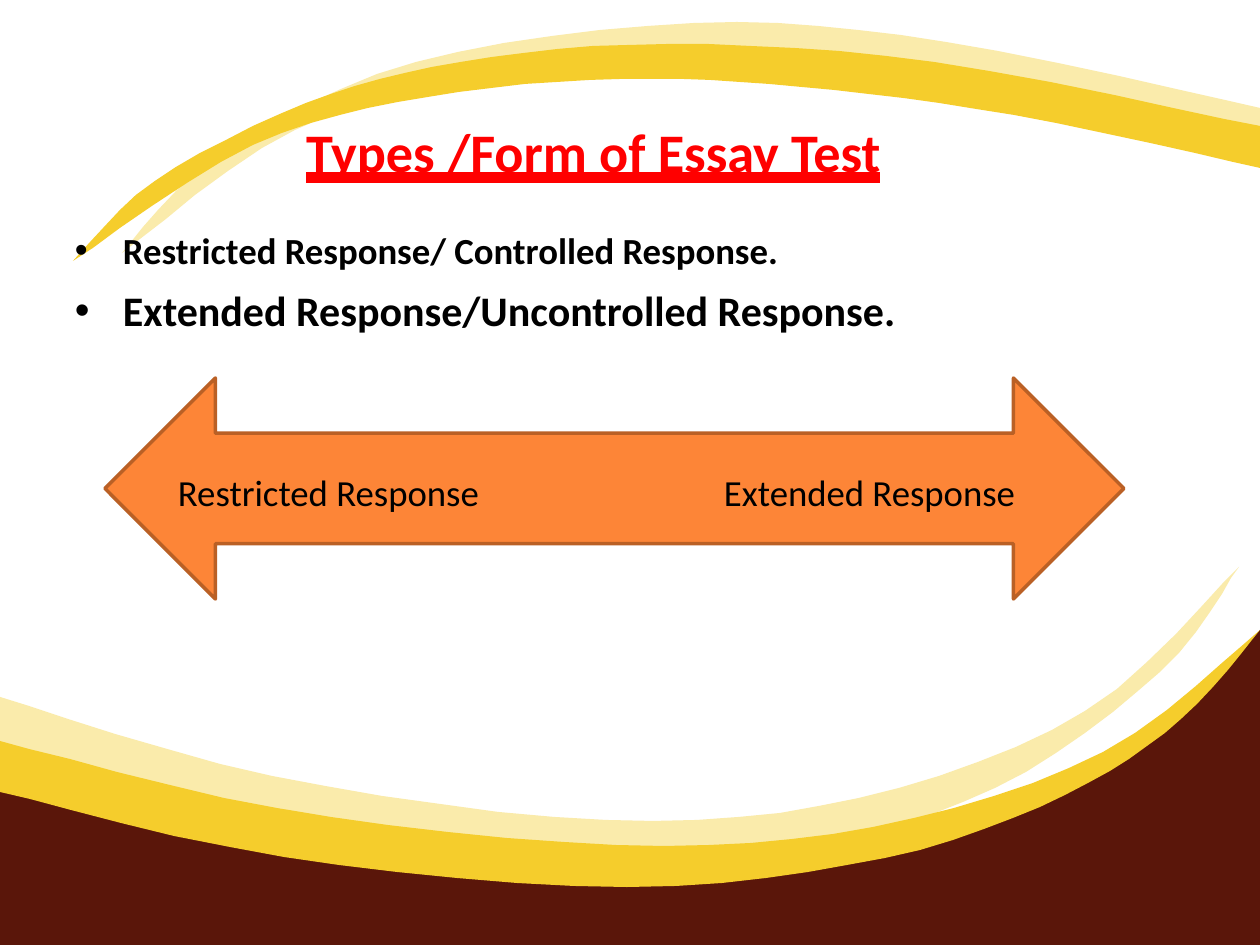
"""Build a slide on the types of essay test, with a two-way arrow between wave bands."""
from pptx import Presentation
from pptx.dml.color import RGBColor as RGB
from pptx.enum.shapes import MSO_SHAPE as SHAPE
from pptx.enum.text import MSO_ANCHOR as ANCHOR, MSO_UNDERLINE as UNDERLINE, PP_ALIGN as ALIGN
from pptx.oxml.ns import qn
from pptx.util import Emu, Pt
from lxml.etree import SubElement

PX = 914400 / 126
WIDTH, HEIGHT = 1260, 945
STEPS = 6
COLORS = {"pale": "FAEBAB", "gold": "F5CD2C", "maroon": "5A160A", "orange": "FD8537",
          "rust": "BA6025", "red": "FF0000", "black": "000000"}
WAVES = [
    ("pale",
     [(122, 253), (219, 155), (416, 62), (694, 23), (946, 42), (WIDTH, 108)],
     [(WIDTH, 155), (1024, 97), (761, 63), (504, 72), (295, 130), (122, 253)]),
    ("gold",
     [(73, 261), (155, 181), (306, 103), (461, 62), (668, 44), (934, 62), (WIDTH, 126)],
     [(WIDTH, 168), (1014, 115), (801, 87), (622, 79), (428, 97), (253, 145), (73, 261)]),
    ("maroon",
     [(0, 785), (258, 845), (549, 873), (819, 858), (1048, 795), (1183, 713), (WIDTH, 630)],
     [(WIDTH, HEIGHT), (0, HEIGHT)]),
    ("pale",
     [(0, 697), (272, 776), (606, 820), (859, 798), (1085, 711), (1239, 567)],
     [(1239, 567), (1160, 672), (995, 788), (794, 852), (616, 868), (278, 833), (0, 757)]),
    ("gold",
     [(0, 741), (277, 808), (616, 845), (873, 827), (1103, 752), (WIDTH, 630)],
     [(WIDTH, 630), (1181, 719), (1065, 795), (885, 858), (627, 887), (284, 857), (0, 792)]),
]


def px(*lengths):
    return [Emu(round(n * PX)) for n in lengths]


def smooth_curve(knots):
    ends = [knots[0]] + knots + [knots[-1]]
    points = [knots[0]]
    for before, start, stop, after in zip(ends, ends[1:], ends[2:], ends[3:]):
        for step in range(1, STEPS + 1):
            t = step / STEPS
            points.append(tuple(
                b + t * (c - a + t * (2 * a - 5 * b + 4 * c - d + t * (3 * b - a - 3 * c + d))) / 2
                for a, b, c, d in zip(before, [2 * v / 2 for v in start], stop, after)))
    return points


prs = Presentation()
prs.slide_width, prs.slide_height = px(WIDTH, HEIGHT)
s = prs.slides.add_slide(prs.slide_layouts[5])

for color, upper, lower in WAVES:
    outline = smooth_curve(upper) + smooth_curve(lower)
    fb = s.shapes.build_freeform(*outline[0], scale=PX)
    fb.add_line_segments(outline[1:], close=True)
    sp = fb.convert_to_shape()
    sp.shadow.inherit = False
    sp.fill.solid()
    sp.fill.fore_color.rgb = RGB.from_string(COLORS[color])
    sp.line.fill.background()

arrow = s.shapes.add_shape(SHAPE.LEFT_RIGHT_ARROW, *px(105, 378, 1019, 221))
arrow.shadow.inherit = False
arrow.fill.solid()
arrow.fill.fore_color.rgb = RGB.from_string(COLORS["orange"])
arrow.line.color.rgb = RGB.from_string(COLORS["rust"])
arrow.line.width = Pt(2)

title = s.shapes.title
title.left, title.top, title.width, title.height = px(306, 118, 683, 67)
body = s.shapes.add_textbox(*px(75, 228, 885, 110))
left_label, right_label = [s.shapes.add_textbox(*px(x, 470, 355, 46)) for x in (178, 724)]

indent = px(48)[0]
for p_count, sp in ((2, body),):
    sp.text_frame.text = "Restricted Response/ Controlled Response.\nExtended Response/Uncontrolled Response."
    for p in sp.text_frame.paragraphs:
        pPr = p._p.get_or_add_pPr()
        pPr.set("marL", str(indent))
        pPr.set("indent", str(-indent))
        SubElement(pPr, qn("a:buFont")).set("typeface", "Arial")
        SubElement(pPr, qn("a:buChar")).set("char", "•")

title.text_frame.text = "Types /Form of Essay Test"
left_label.text_frame.text = "Restricted Response"
right_label.text_frame.text = "Extended Response"

for sp, sizes, color, bold in [(title, [31], "red", True), (body, [21, 24], "black", True),
                               (left_label, [21], "black", False),
                               (right_label, [21], "black", False)]:
    tf = sp.text_frame
    tf.word_wrap = True
    tf.vertical_anchor = ANCHOR.TOP
    tf.margin_left = tf.margin_right = tf.margin_top = tf.margin_bottom = 0
    for p, size in zip(tf.paragraphs, sizes):
        p.alignment = ALIGN.LEFT
        p.space_before = Pt(0)
        f = p.runs[0].font
        f.name, f.size, f.bold = "Calibri", Pt(size), bold
        f.color.rgb = RGB.from_string(COLORS[color])

title.text_frame.paragraphs[0].runs[0].font.underline = UNDERLINE.HEAVY_LINE
body.text_frame.paragraphs[1].space_before = Pt(7)

prs.save("out.pptx")
